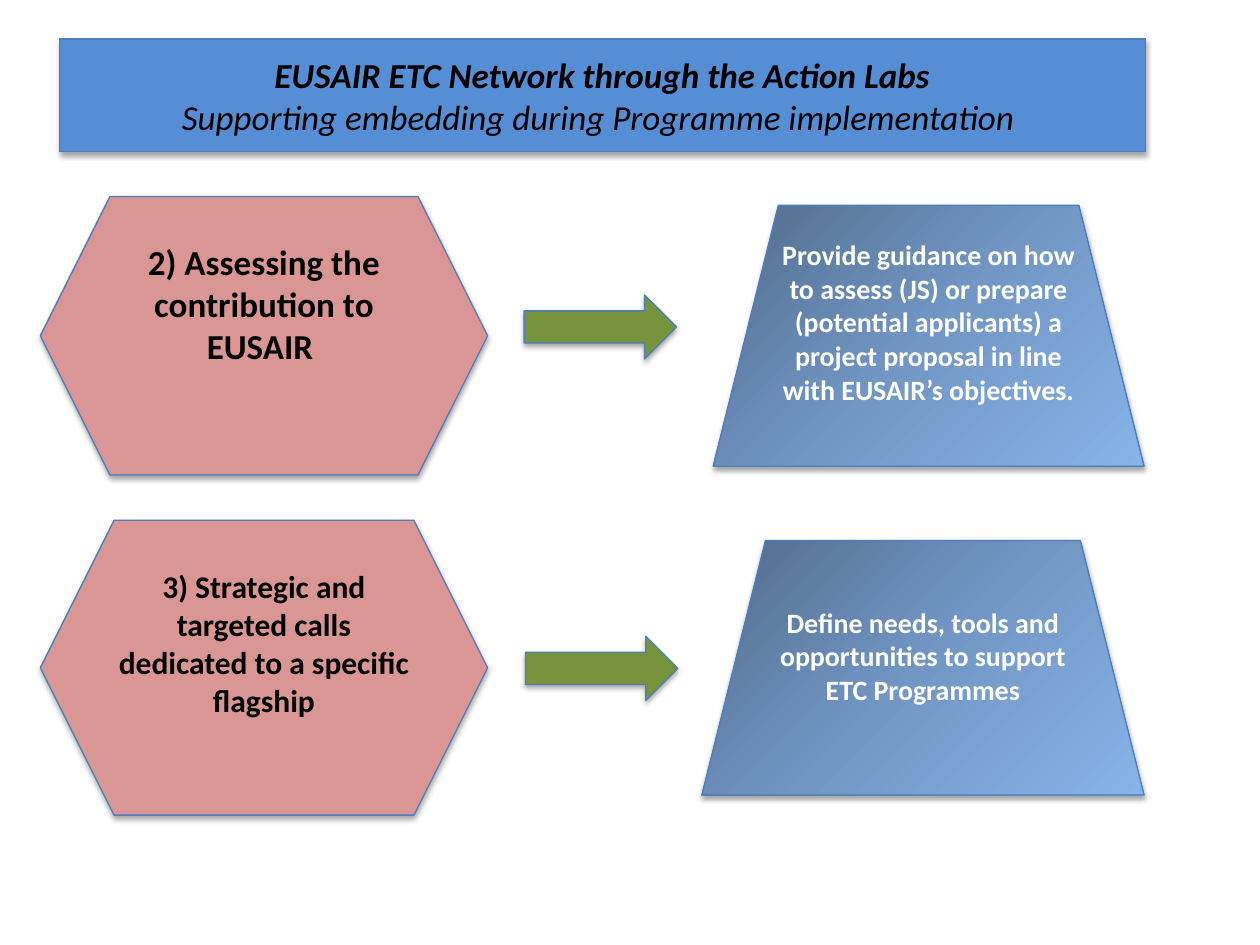
from copy import deepcopy

from lxml.etree import SubElement
from pptx import Presentation
from pptx.dml.color import RGBColor
from pptx.enum.shapes import MSO_SHAPE
from pptx.enum.text import MSO_ANCHOR, MSO_AUTO_SIZE, PP_ALIGN
from pptx.oxml.ns import qn
from pptx.util import Inches, Pt

TITLE_BLUE = RGBColor(0x55, 0x8E, 0xD5)
OUTLINE_BLUE = RGBColor(0x4B, 0x7E, 0xBC)
ROSE = RGBColor(0xD9, 0x96, 0x94)
GREEN = RGBColor(0x77, 0x93, 0x3C)
BLACK = RGBColor(0x00, 0x00, 0x00)
WHITE = RGBColor(0xFF, 0xFF, 0xFF)
GRADIENT = [
    (0, RGBColor(0x50, 0x6A, 0x8A)),
    (0.5, RGBColor(0x72, 0x97, 0xC5)),
    (1, RGBColor(0x87, 0xB3, 0xE9)),
]
FONT = "Calibri"


def write_text(frame, lines, size, color, bold=(True,), italic=False,
               anchor=MSO_ANCHOR.TOP, top_margin=0.05):
    frame.word_wrap = True
    frame.auto_size = MSO_AUTO_SIZE.NONE
    frame.vertical_anchor = anchor
    frame.margin_left = frame.margin_right = Inches(0.1)
    frame.margin_top, frame.margin_bottom = Inches(top_margin), Inches(0.05)
    for index, (line, is_bold) in enumerate(zip(lines, bold)):
        para = frame.add_paragraph() if index else frame.paragraphs[0]
        para.alignment = PP_ALIGN.CENTER
        span = para.add_run()
        span.text = line
        span.font.name = FONT
        span.font.size = Pt(size)
        span.font.bold = is_bold
        span.font.italic = italic
        span.font.color.rgb = color


def add_soft_shadow(shape):
    shape.shadow.inherit = False
    effects = shape._element.spPr.find(qn("a:effectLst"))
    shadow = SubElement(effects, qn("a:outerShdw"), blurRad=str(Pt(3.1)),
                        dist=str(Pt(1.8)), dir="5400000", rotWithShape="0")
    color = SubElement(shadow, qn("a:srgbClr"), val=str(BLACK))
    SubElement(color, qn("a:alpha"), val="35000")


def fill_gradient(shape):
    shape.fill.gradient()
    shape.fill.gradient_angle = 315
    stop_list = shape._element.spPr.find(".//" + qn("a:gsLst"))
    stop_list.insert(1, deepcopy(stop_list[0]))
    for stop, (position, color) in zip(shape.fill.gradient_stops, GRADIENT):
        stop.position = position
        stop.color.rgb = color


def style_shape(shape, color=None):
    if color is None:
        fill_gradient(shape)
    else:
        shape.fill.solid()
        shape.fill.fore_color.rgb = color
    shape.line.color.rgb = OUTLINE_BLUE
    shape.line.width = Pt(0.75)
    add_soft_shadow(shape)


def add_block(page, kind, box, color=None):
    shape = page.shapes.add_shape(kind, *map(Inches, box))
    style_shape(shape, color)
    return shape


def place_title(page, box):
    title = page.shapes.title
    title.left, title.top, title.width, title.height = map(Inches, box)
    geometry = SubElement(title._element.spPr, qn("a:prstGeom"), prst="roundRect")
    SubElement(geometry, qn("a:avLst"))
    style_shape(title, TITLE_BLUE)
    lines = ["EUSAIR ETC Network through the Action Labs",
             "Supporting embedding during Programme implementation "]
    write_text(title.text_frame, lines, 20, BLACK, bold=(True, False),
               italic=True, anchor=MSO_ANCHOR.MIDDLE)


def add_topic(page, box, text, size):
    hexagon = add_block(page, MSO_SHAPE.HEXAGON, box, ROSE)
    write_text(hexagon.text_frame, [text], size, BLACK)


def add_outcome(page, box, text, top_margin):
    trapezoid = add_block(page, MSO_SHAPE.TRAPEZOID, box)
    write_text(trapezoid.text_frame, [text], 16, WHITE, top_margin=top_margin)


def add_row(page, topic, arrow_box, outcome):
    add_topic(page, *topic)
    add_block(page, MSO_SHAPE.RIGHT_ARROW, arrow_box, GREEN)
    add_outcome(page, *outcome)


def main():
    deck = Presentation()
    deck.slide_width, deck.slide_height = Inches(10), Inches(7.5)
    page = deck.slides.add_slide(deck.slide_layouts[5])
    place_title(page, (0.47, 0.31, 8.62, 0.89))
    add_row(
        page,
        ((0.32, 1.56, 3.55, 2.21), "2) Assessing the contribution to EUSAIR ", 20),
        (4.16, 2.34, 1.21, 0.51),
        ((5.66, 1.63, 3.42, 2.07),
         "Provide guidance on how to assess (JS) or prepare (potential applicants) "
         "a project proposal in line with EUSAIR’s objectives.", 0.05),
    )
    add_row(
        page,
        ((0.32, 4.13, 3.55, 2.34),
         "3) Strategic and targeted calls dedicated to a specific flagship", 18),
        (4.17, 5.05, 1.21, 0.51),
        ((5.57, 4.29, 3.51, 2.02),
         "Define needs, tools and opportunities to support ETC Programmes", 0.32),
    )
    deck.save("out.pptx")


if __name__ == "__main__":
    main()
